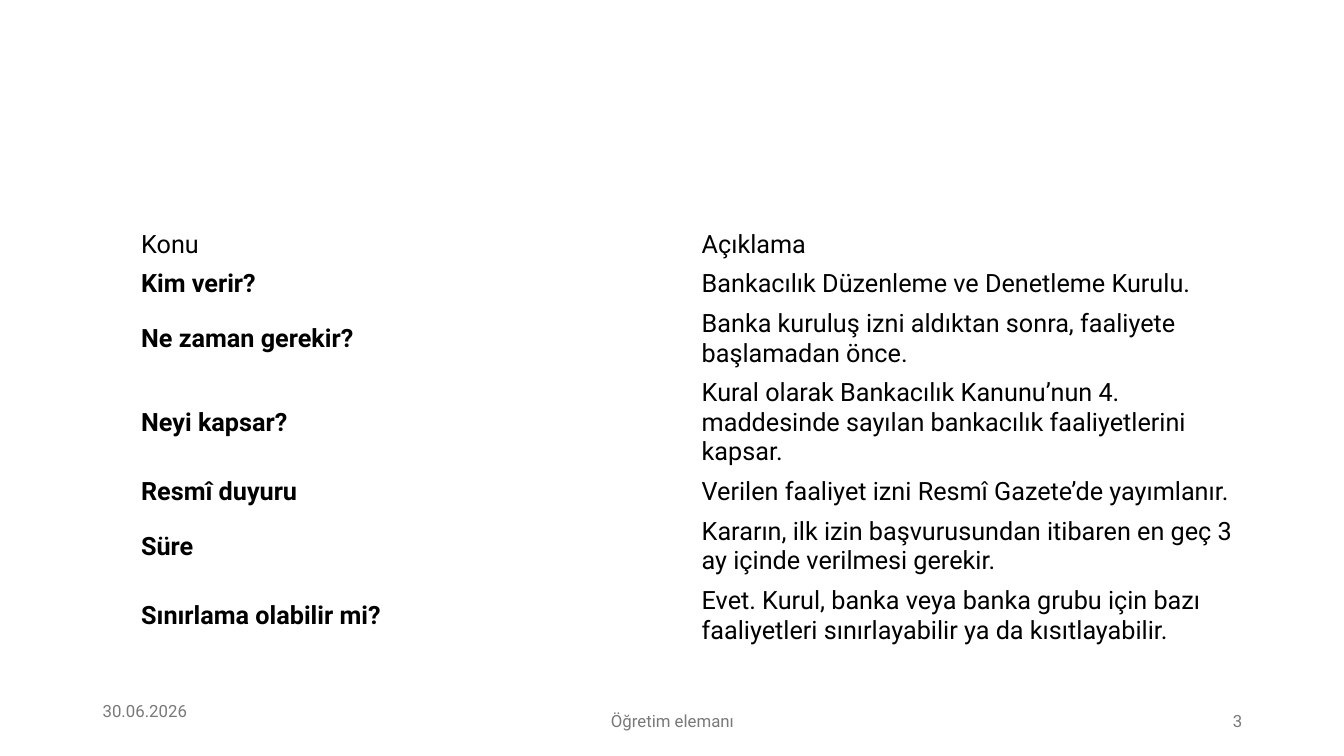
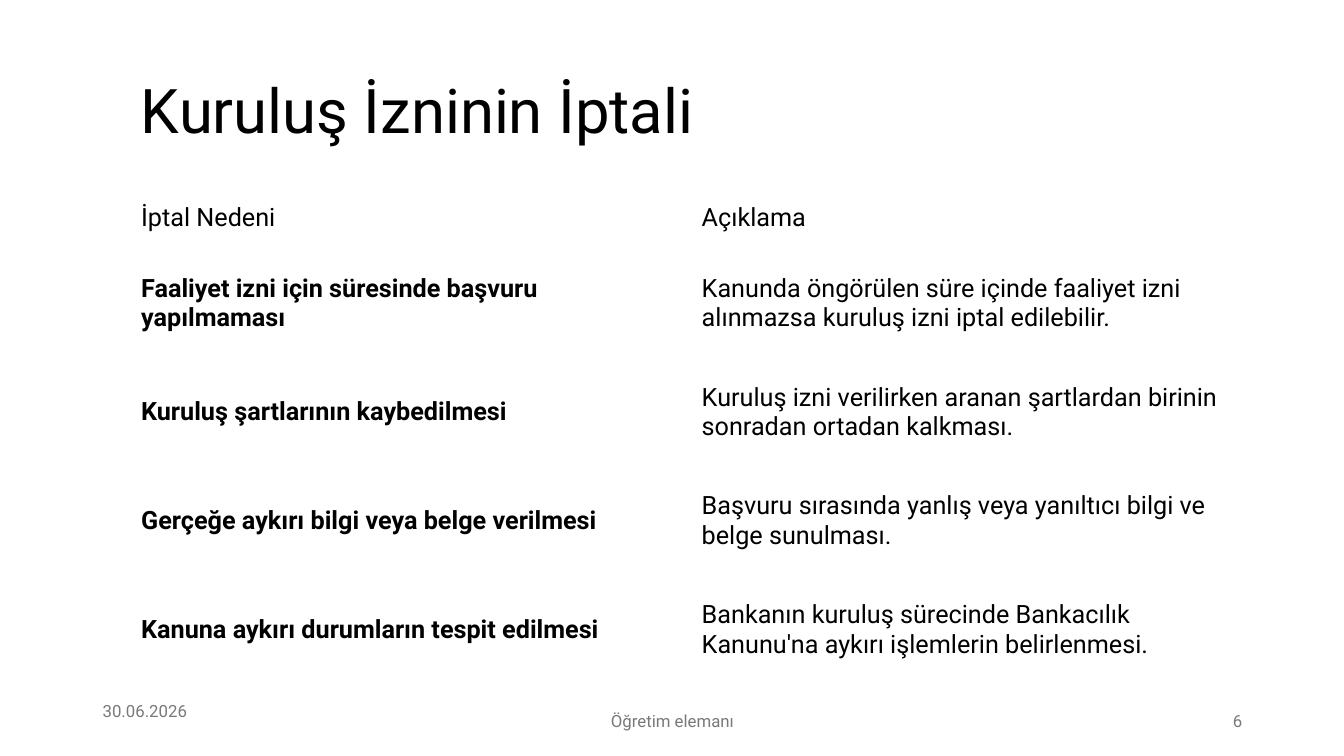
from pptx import Presentation
from pptx.dml.color import RGBColor
from pptx.enum.text import MSO_ANCHOR, PP_ALIGN
from pptx.util import Pt

MIDDLE = MSO_ANCHOR.MIDDLE
LEFT, CENTER, RIGHT = PP_ALIGN.LEFT, PP_ALIGN.CENTER, PP_ALIGN.RIGHT

PX = 9144
SLIDE_W, SLIDE_H = 1333, 750
FONT = "Roboto"
COLORS = {"text": "000000", "footer": "797979", "background": "FFFFFF"}
TITLE_SIZE, TABLE_SIZE, FOOTER_SIZE = 44, 18, 12
CONTENT_X, CONTENT_W = 130, 1112
TITLE_Y, TITLE_H = 40, 145
FOOTER_H = 40
LINE_H, CELL_PADDING = 29, 10

DATE = "30.06.2026"
LECTURER = "Öğretim elemanı"

SLIDES = [
    {
        "number": 3,
        "title": None,
        "top": 223,
        "row_heights": [CELL_PADDING + LINE_H * n for n in (1, 1, 2, 3, 1, 2, 2)],
        "rows": [
            ("Konu", "Açıklama"),
            ("Kim verir?", "Bankacılık Düzenleme ve Denetleme Kurulu."),
            ("Ne zaman gerekir?",
             "Banka kuruluş izni aldıktan sonra, faaliyete başlamadan önce."),
            ("Neyi kapsar?",
             "Kural olarak Bankacılık Kanunu’nun 4. maddesinde sayılan "
             "bankacılık faaliyetlerini kapsar."),
            ("Resmî duyuru", "Verilen faaliyet izni Resmî Gazete’de yayımlanır."),
            ("Süre",
             "Kararın, ilk izin başvurusundan itibaren en geç 3 ay içinde "
             "verilmesi gerekir."),
            ("Sınırlama olabilir mi?",
             "Evet. Kurul, banka veya banka grubu için bazı faaliyetleri "
             "sınırlayabilir ya da kısıtlayabilir."),
        ],
    },
    {
        "number": 6,
        "title": "Kuruluş İzninin İptali",
        "top": TITLE_Y + TITLE_H,
        "row_heights": [62] + [108] * 4,
        "rows": [
            ("İptal Nedeni", "Açıklama"),
            ("Faaliyet izni için süresinde başvuru yapılmaması",
             "Kanunda öngörülen süre içinde faaliyet izni alınmazsa kuruluş "
             "izni iptal edilebilir."),
            ("Kuruluş şartlarının kaybedilmesi",
             "Kuruluş izni verilirken aranan şartlardan birinin sonradan "
             "ortadan kalkması."),
            ("Gerçeğe aykırı bilgi veya belge verilmesi",
             "Başvuru sırasında yanlış veya yanıltıcı bilgi ve belge sunulması."),
            ("Kanuna aykırı durumların tespit edilmesi",
             "Bankanın kuruluş sürecinde Bankacılık Kanunu'na aykırı "
             "işlemlerin belirlenmesi."),
        ],
    },
]


def px(*lengths):
    """Convert pixel lengths to EMU."""
    return [length * PX for length in lengths]


def set_text(tf, text, size, color="text", bold=False, align=LEFT):
    """Write one formatted paragraph and return it."""
    tf.text = text
    p = tf.paragraphs[0]
    p.alignment = align
    font = p.runs[0].font
    font.name, font.size, font.bold = FONT, Pt(size), bold
    font.color.rgb = RGBColor.from_string(COLORS[color])
    return p


def add_text(s, box, text, size, **style):
    """Add a wrapped, vertically centred text box and return its paragraph."""
    tf = s.shapes.add_textbox(*px(*box)).text_frame
    tf.word_wrap = True
    tf.vertical_anchor = MIDDLE
    return set_text(tf, text, size, **style)


def add_title(s, title):
    """Add the slide title."""
    p = add_text(s, (CONTENT_X, TITLE_Y, CONTENT_W, TITLE_H), title, TITLE_SIZE)
    p.line_spacing = 0.9


def add_topic_table(s, rows, top, heights):
    """Add a plain two-column table with bold topics below its header."""
    box = px(CONTENT_X, top, CONTENT_W, sum(heights))
    table = s.shapes.add_table(len(rows), len(rows[0]), *box).table
    table.first_row = table.horz_banding = False
    for i, (row, height) in enumerate(zip(rows, heights)):
        table.rows[i].height = height * PX
        for j, text in enumerate(row):
            cell = table.cell(i, j)
            cell.fill.background()
            cell.vertical_anchor = MIDDLE
            set_text(cell.text_frame, text, TABLE_SIZE, bold=i > 0 and j == 0)


def add_footer(s, number):
    """Add the date, lecturer and slide number."""
    for x, y, w, text, align in (
        (92, 685, 300, DATE, LEFT),
        (442, 695, 450, LECTURER, CENTER),
        (942, 695, 300, str(number), RIGHT),
    ):
        add_text(s, (x, y, w, FOOTER_H), text, FOOTER_SIZE, color="footer", align=align)


def main():
    """Build and save the presentation."""
    prs = Presentation()
    prs.slide_width, prs.slide_height = px(SLIDE_W, SLIDE_H)
    for content in SLIDES:
        s = prs.slides.add_slide(prs.slide_layouts[6])
        fill = s.background.fill
        fill.solid()
        fill.fore_color.rgb = RGBColor.from_string(COLORS["background"])
        if content["title"]:
            add_title(s, content["title"])
        add_topic_table(s, content["rows"], content["top"], content["row_heights"])
        add_footer(s, content["number"])
    prs.save("out.pptx")


if __name__ == "__main__":
    main()
